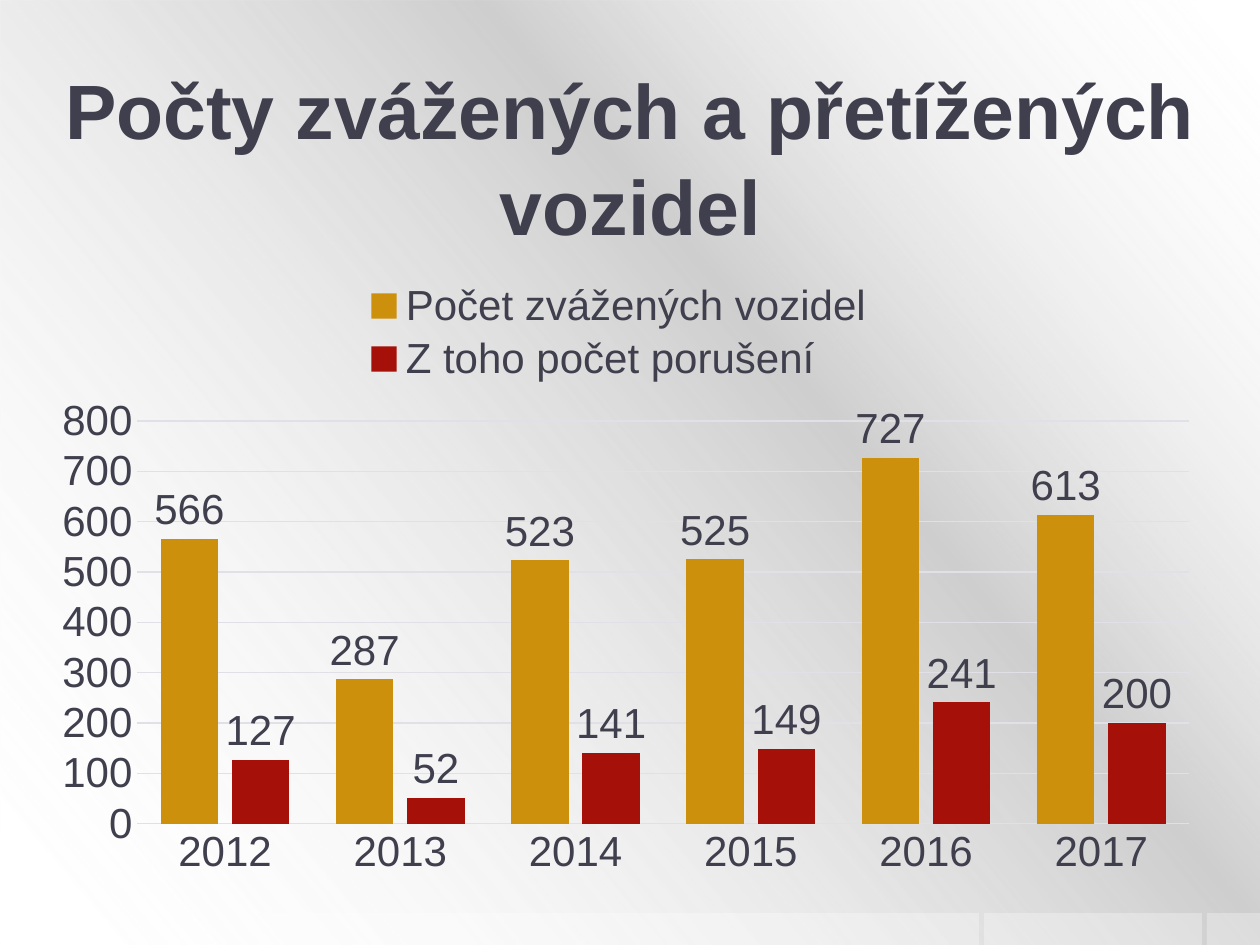
from dataclasses import dataclass

from lxml.etree import SubElement
from pptx import Presentation
from pptx.chart.data import CategoryChartData
from pptx.dml.color import RGBColor
from pptx.enum.chart import XL_CHART_TYPE, XL_LABEL_POSITION, XL_LEGEND_POSITION, XL_TICK_MARK
from pptx.enum.shapes import MSO_SHAPE
from pptx.enum.text import MSO_ANCHOR, PP_ALIGN
from pptx.oxml import parse_xml
from pptx.oxml.ns import nsdecls, qn
from pptx.util import Pt


@dataclass(frozen=True)
class Theme:
    font: str = "Arial"
    ink: str = "3F3F4D"
    grid: str = "E0E0E6"
    white: str = "FFFFFF"
    gray: str = "BFBFBF"
    bars: tuple = ("CD900D", "A51009")
    title: int = 44
    label: int = 24


THEME = Theme()
WIDTH, HEIGHT = 1260, 945
YEARS = ["2012", "2013", "2014", "2015", "2016", "2017"]
SERIES = {
    "Počet zvážených vozidel": (566, 287, 523, 525, 727, 613),
    "Z toho počet porušení": (127, 52, 141, 149, 241, 200),
}


def px(n):
    return round(n * 914400 / 126)


def rgb(color):
    return RGBColor.from_string(color)


def set_font(font, size, color=THEME.ink, bold=False):
    font.name = THEME.font
    font.size = Pt(size)
    font.bold = bold
    font.color.rgb = rgb(color)


def add_text(s, box, text, *, size, bold=False, align=PP_ALIGN.LEFT, spacing=1.0):
    sp = s.shapes.add_textbox(*map(px, box))
    tf = sp.text_frame
    tf.word_wrap = True
    tf.vertical_anchor = MSO_ANCHOR.MIDDLE
    tf.margin_left = tf.margin_right = 0
    p = tf.paragraphs[0]
    p.alignment = align
    p.line_spacing = spacing
    r = p.add_run()
    r.text = text
    set_font(r.font, size, bold=bold)


def add_rect(s, box):
    sp = s.shapes.add_shape(MSO_SHAPE.RECTANGLE, *map(px, box))
    sp.shadow.inherit = False
    sp.line.fill.background()
    sp.fill.solid()
    sp.fill.fore_color.rgb = rgb(THEME.white)
    return sp


def add_backdrop(s, box):
    sp = add_rect(s, box)
    stops = ((0, THEME.white, 0), (34, THEME.gray, 61), (38, THEME.gray, 76), (100, THEME.white, 0))
    gs = "".join(
        f'<a:gs pos="{pos * 1000}"><a:srgbClr val="{color}">'
        f'<a:alpha val="{alpha * 1000}"/></a:srgbClr></a:gs>'
        for pos, color, alpha in stops
    )
    grad = parse_xml(
        f'<a:gradFill {nsdecls("a")} rotWithShape="1"><a:gsLst>{gs}</a:gsLst>'
        f'<a:lin ang="{140 * 60000}" scaled="0"/></a:gradFill>'
    )
    solid = sp.element.spPr.find(qn("a:solidFill"))
    solid.getparent().replace(solid, grad)


def add_footer(s, box):
    x, y, w, h = box
    gap = 5
    for part in (979, 218, w - 979 - 218 - 2 * gap):
        sp = add_rect(s, (x, y, part, h))
        color = sp.element.spPr.find(qn("a:solidFill"))[0]
        SubElement(color, qn("a:alpha")).set("val", "30000")
        x += part + gap


def set_layout(parent, x, y, w, h, inner=False):
    target = '<c:layoutTarget val="inner"/>' if inner else ""
    sizes = "".join(f'<c:{k} val="{v}"/>' for k, v in zip("xywh", (x, y, w, h)))
    layout = parse_xml(
        f'<c:layout {nsdecls("c")}><c:manualLayout>{target}<c:xMode val="edge"/>'
        f'<c:yMode val="edge"/>{sizes}</c:manualLayout></c:layout>'
    )
    for old in parent.findall(qn("c:layout")):
        parent.remove(old)
    parent.insert(0 if inner else 1, layout)


def style_axis(axis):
    axis.major_tick_mark = axis.minor_tick_mark = XL_TICK_MARK.NONE
    set_font(axis.tick_labels.font, THEME.label)


def style_line(line):
    line.color.rgb = rgb(THEME.grid)
    line.width = Pt(0.75)


def add_bar_chart(s, box):
    data = CategoryChartData()
    data.categories = YEARS
    for name, values in SERIES.items():
        data.add_series(name, values)
    chart = s.shapes.add_chart(XL_CHART_TYPE.COLUMN_CLUSTERED, *map(px, box), data).chart
    chart.has_title = False
    set_font(chart.font, THEME.label)

    style_axis(chart.category_axis)
    style_line(chart.category_axis.format.line)
    value_axis = chart.value_axis
    style_axis(value_axis)
    value_axis.format.line.fill.background()
    value_axis.has_major_gridlines = True
    style_line(value_axis.major_gridlines.format.line)
    value_axis.minimum_scale, value_axis.maximum_scale = 0, 800
    value_axis.major_unit = 100

    plot = chart.plots[0]
    plot.gap_width, plot.overlap = 81, -24
    plot.vary_by_categories = False
    for series, color in zip(plot.series, THEME.bars):
        series.format.fill.solid()
        series.format.fill.fore_color.rgb = rgb(color)
        labels = series.data_labels
        labels.show_value = True
        labels.position = XL_LABEL_POSITION.OUTSIDE_END
        set_font(labels.font, THEME.label)

    chart.has_legend = True
    legend = chart.legend
    legend.position = XL_LEGEND_POSITION.BOTTOM
    legend.include_in_layout = False
    set_font(legend.font, THEME.label)
    set_layout(legend._element, 0.26, 0.09, 0.46, 0.16)
    set_layout(chart._chartSpace.chart.plotArea, 0.086, 0.297, 0.883, 0.578, inner=True)


def main():
    prs = Presentation()
    prs.slide_width, prs.slide_height = px(WIDTH), px(HEIGHT)
    s = prs.slides.add_slide(prs.slide_layouts[6])
    add_backdrop(s, (0, 0, WIDTH, HEIGHT))
    add_footer(s, (0, 913, WIDTH, 32))
    add_text(s, (35, 65, 1191, 179), "Počty zvážených a přetížených vozidel",
             size=THEME.title, bold=True, align=PP_ALIGN.CENTER, spacing=1.04)
    add_bar_chart(s, (35, 214, 1191, 697))
    prs.save("out.pptx")


if __name__ == "__main__":
    main()
